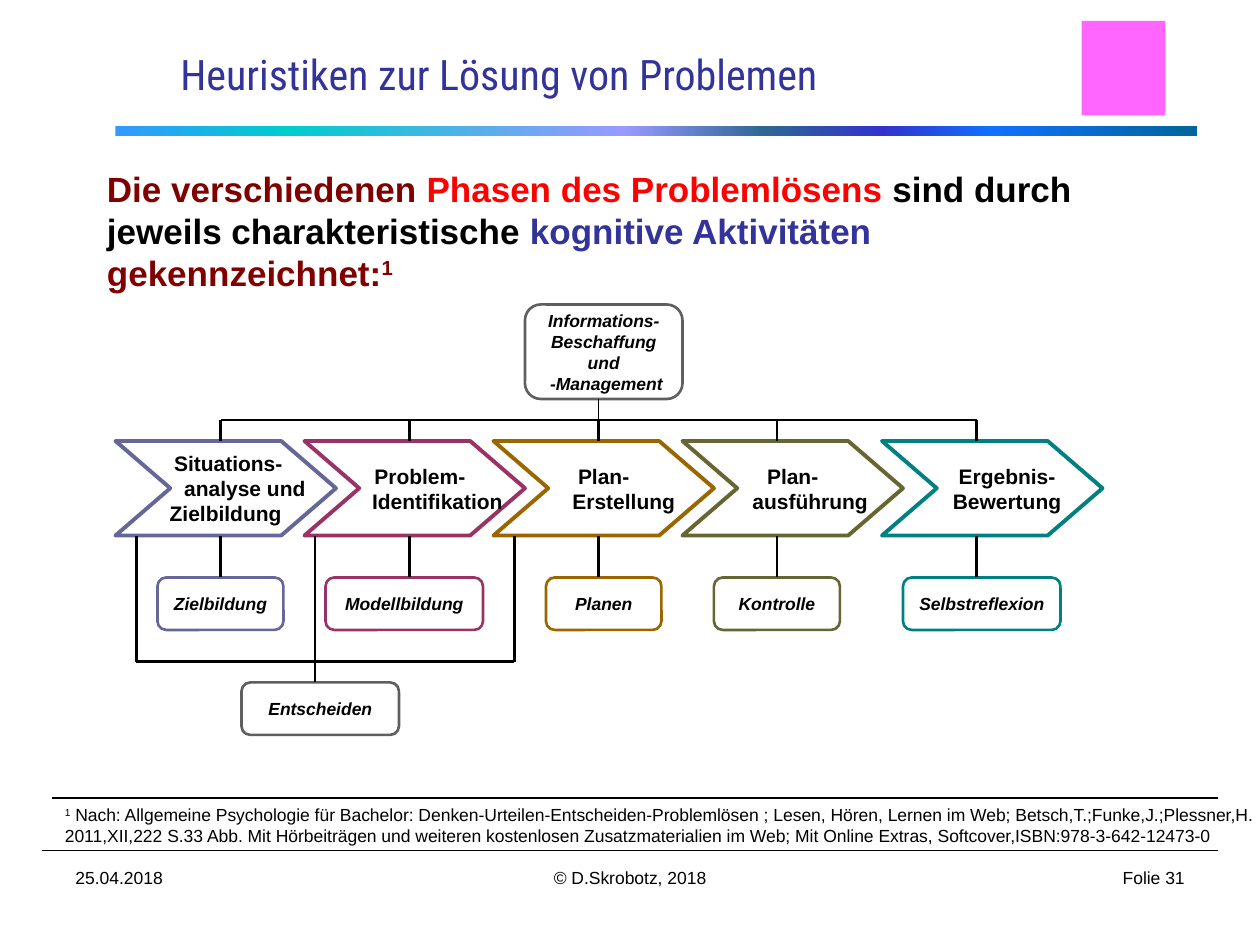
"""Build a slide on the phases of problem solving and their cognitive activities."""
import pptx
import pptx.util
import pptx.dml.color
import pptx.enum.shapes
import pptx.enum.text
import pptx.oxml
import pptx.oxml.ns

Pt = pptx.util.Pt
Rgb = pptx.dml.color.RGBColor.from_string
Kind = pptx.enum.shapes.MSO_SHAPE
Side = pptx.enum.text.PP_ALIGN
Mid = pptx.enum.text.MSO_ANCHOR.MIDDLE
look = {
    "black": "000000", "gray": "5F5F5F", "navy": "333399", "maroon": "800000", "red": "FF0000",
    "phases": ["666699", "993366", "996600", "666633", "008080"],
    "pink": "FF66FF",
    "bar": [(0, "3399FF"), (16, "00CCCC"), (47, "9999FF"), (60, "2E6792"),
            (71, "3333CC"), (81, "1170FF"), (100, "006699")],
    "title": {"name": "Roboto Condensed", "size": Pt(24)},
    "lead": {"name": "Arial", "size": Pt(20), "bold": True},
    "phase": {"name": "Arial", "size": Pt(12), "bold": True},
    "task": {"name": "Arial", "size": Pt(10), "bold": True, "italic": True},
    "small": {"name": "Arial", "size": Pt(10)},
}


def write(shape, lines, style, align=Side.LEFT, **frame):
    """Fill a shape with lines, each an indent and its runs of text, colour and raise."""
    text = shape.text_frame
    for key, value in {"word_wrap": False, **frame}.items():
        setattr(text, key, value)
    for num, (indent, runs) in enumerate(lines):
        para = text.add_paragraph() if num else text.paragraphs[0]
        para.alignment = align
        if indent:
            para._p.get_or_add_pPr().set("marL", str(Pt(indent)))
            para._p.get_or_add_pPr().set("indent", "0")
        for words, color, lift in runs:
            run = para.add_run()
            run.text = words
            for key, value in style.items():
                setattr(run.font, key, value)
            run.font.color.rgb = Rgb(look[color])
            if lift:
                run._r.get_or_add_rPr().set("baseline", str(lift * 1000))


def wire(x1, y1, x2, y2, width=1.5):
    """Draw a plain black line between two points."""
    line = shapes.add_connector(pptx.enum.shapes.MSO_CONNECTOR.STRAIGHT, Pt(x1), Pt(y1), Pt(x2), Pt(y2))
    line.line.color.rgb = Rgb(look["black"])
    line.line.width = Pt(width)
    line._element.spPr.append(pptx.oxml.parse_xml(f"<a:effectLst {pptx.oxml.ns.nsdecls('a')}/>"))
    return line


deck = pptx.Presentation()
deck.slide_width, deck.slide_height = Pt(720), Pt(540)
shapes = deck.slides.add_slide(deck.slide_layouts[6]).shapes

bar = shapes.add_shape(Kind.RECTANGLE, Pt(66), Pt(72), Pt(618), Pt(6))
bar.shadow.inherit = False
bar.line.fill.background()
bar.fill.gradient()
bar.fill.gradient_angle = 0
stops = bar._element.spPr.find(pptx.oxml.ns.qn("a:gradFill")).find(pptx.oxml.ns.qn("a:gsLst"))
for stop in list(stops):
    stops.remove(stop)
for pos, color in look["bar"]:
    stops.append(pptx.oxml.parse_xml(
        f'<a:gs {pptx.oxml.ns.nsdecls("a")} pos="{pos * 1000}"><a:srgbClr val="{color}"/></a:gs>'))

wire(24, 486, 696, 486, 0.75)
wire(30, 456, 696, 456, 0.75)

notes = [
    (0, [("1", "black", 30), (" Nach: Allgemeine Psychologie für Bachelor: Denken-Urteilen-Entscheiden-Problemlösen ; "
          "Lesen, Hören, Lernen im Web; Betsch,T.;Funke,J.;Plessner,H.", "black", 0)]),
    (0, [("2011,XII,222 S.33 Abb. Mit Hörbeiträgen und weiteren kostenlosen Zusatzmaterialien im Web; "
          "Mit Online Extras, Softcover,ISBN:978-3-642-12473-0", "black", 0)]),
]
lead = [
    (0, [("Die verschiedenen ", "maroon", 0), ("Phasen des Problemlösens ", "red", 0), ("sind durch", "black", 0)]),
    (0, [("jeweils charakteristische ", "black", 0), ("kognitive Aktivitäten", "navy", 0),
         (" gekennzeichnet:", "maroon", 0), ("1", "maroon", 30)]),
]
texts = [
    (96, 24, 389, 36, [(0, [("Heuristiken zur Lösung von Problemen", "navy", 0)])], "title", Side.LEFT, False),
    (54, 92, 608, 80, lead, "lead", Side.LEFT, True),
    (30, 456, 695, 31, notes, "small", Side.LEFT, False),
    (36, 492, 168, 37, [(0, [("25.04.2018", "black", 0)])], "small", Side.LEFT, True),
    (246, 492, 228, 37, [(0, [("© D.Skrobotz, 2018", "black", 0)])], "small", Side.CENTER, True),
    (516, 492, 168, 37, [(0, [("Folie 31", "black", 0)])], "small", Side.RIGHT, True),
]
for left, top, width, height, lines, style, align, wrap in texts:
    box = shapes.add_textbox(Pt(left), Pt(top), Pt(width), Pt(height))
    write(box, lines, look[style], align, word_wrap=wrap)

phases = [
    (66, 126, [(3, "Situations-"), (22, "analyse und"), (0, "Zielbildung")], 90, 72, "Zielbildung"),
    (174, 234, [(6, "Problem-"), (26, "Identifikation")], 186, 90, "Modellbildung"),
    (282, 342, [(0, "Plan-"), (23, "Erstellung")], 312, 66, "Planen"),
    (390, 444, [(0, "Plan-"), (20, "ausführung")], 408, 72, "Kontrolle"),
    (504, 558, [(17, "Ergebnis-"), (17, "Bewertung")], 516, 90, "Selbstreflexion"),
]
info = [(0, "Informations-"), (0, "Beschaffung"), (0, "und"), (3, "-Management")]
nodes = [
    (Kind.ROUNDED_RECTANGLE, 300, 174, 90, 54, look["gray"], info),
    (Kind.ROUNDED_RECTANGLE, 138, 390, 90, 30, look["gray"], [(0, "Entscheiden")]),
]
for (left, stem, name, start, width, task), color in zip(phases, look["phases"]):
    nodes.append((Kind.CHEVRON, left, 252, 126, 54, color, name))
    nodes.append((Kind.ROUNDED_RECTANGLE, start, 330, width, 30, color, [(0, task)]))

tasks = {}
for kind, left, top, width, height, color, lines in nodes:
    node = shapes.add_shape(kind, Pt(left), Pt(top), Pt(width), Pt(height))
    node.shadow.inherit = False
    node.fill.background()
    node.line.color.rgb = Rgb(color)
    arrow = kind == Kind.CHEVRON
    node.line.width = Pt(2.25 if arrow else 1.5)
    if arrow:
        node.adjustments[0] = 0.58
    else:
        tasks[left] = node
    write(node, [(indent, [(words, "black", 0)]) for indent, words in lines],
          look["phase" if arrow else "task"], Side.CENTER, vertical_anchor=Mid)

wire(126, 240, 558, 240)
wire(342, 228, 342, 240, 1)
for left, stem, name, start, width, task in phases:
    wire(stem, 240, stem, 252)
    link = wire(stem, 306, stem, 330)
    if stem == start + width / 2:
        link.end_connect(tasks[start], 0)
wire(78, 378, 294, 378)
for stem, end in [(78, 378), (180, 390), (294, 378)]:
    wire(stem, 306, stem, end)

mark = shapes.add_shape(Kind.RECTANGLE, Pt(618), Pt(12), Pt(48), Pt(54))
mark.shadow.inherit = False
mark.line.fill.background()
mark.fill.solid()
mark.fill.fore_color.rgb = Rgb(look["pink"])

deck.save("out.pptx")
